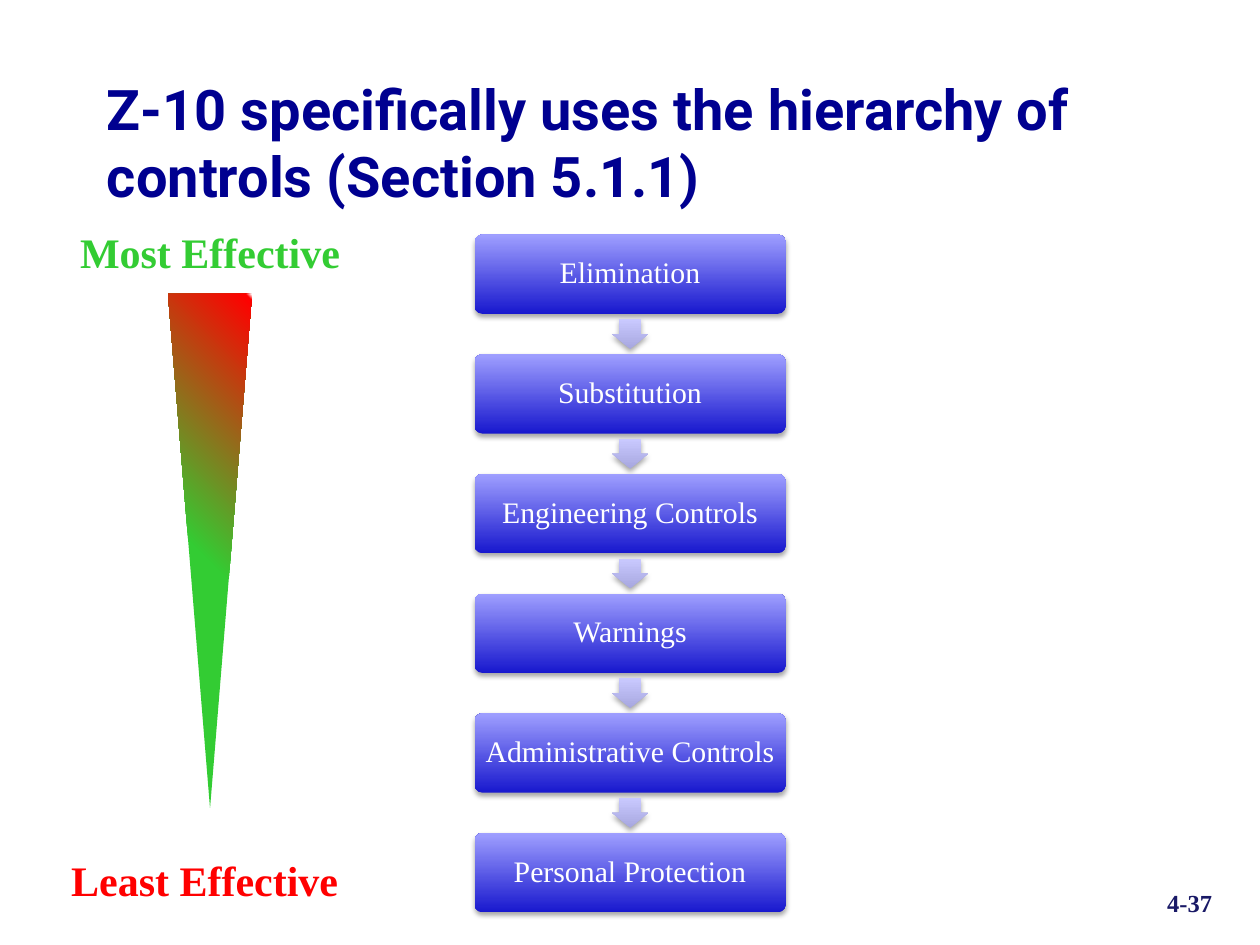
from lxml import etree
from pptx import Presentation
from pptx.dml.color import RGBColor
from pptx.enum import shapes, text
from pptx.oxml import ns
from pptx.util import Pt

COLORS = {
    "title": "000090", "most": "33CC33", "least": "FF0000", "white": "FFFFFF",
    "number": "191966", "box_dark": "1818CE", "box_light": "9F9FFF",
    "arrow_dark": "A7A7DF", "arrow_light": "C9C9FF", "shadow": "000000",
}
SERIF = "Times New Roman"
CONTROLS = ["Elimination", "Substitution", "Engineering Controls", "Warnings",
            "Administrative Controls", "Personal Protection"]


def add_element(parent, tag, **attributes):
    return etree.SubElement(parent, ns.qn(tag), attributes)


def add_color(parent, color):
    return add_element(parent, "a:srgbClr", val=COLORS[color])


def set_gradient(shape, stops, angle):
    shape.fill.gradient()
    gradient = shape.element.spPr.find(ns.qn("a:gradFill"))
    for child in list(gradient):
        gradient.remove(child)
    gradient.set("rotWithShape", "1")
    stop_list = add_element(gradient, "a:gsLst")
    for position, color in stops:
        add_color(add_element(stop_list, "a:gs", pos=str(position * 1000)), color)
    add_element(gradient, "a:lin", ang=str(angle * 60000), scaled="0")


def set_shadow(shape):
    effects = shape.element.spPr.find(ns.qn("a:effectLst"))
    shadow = add_element(effects, "a:outerShdw", blurRad=str(Pt(3.1)),
                         dist=str(Pt(1.8)), dir="5400000", rotWithShape="0")
    add_element(add_color(shadow, "shadow"), "a:alpha", val="35000")


def add_gradient_shape(slide, kind, box, stops, angle, rotation=0):
    shape = slide.shapes.add_shape(kind, *map(Pt, box))
    shape.rotation = rotation
    shape.line.fill.background()
    shape.shadow.inherit = False
    set_gradient(shape, stops, angle)
    return shape


def write_text(shape, words, size, color, align, font=SERIF, bold=False):
    frame = shape.text_frame
    frame.word_wrap = True
    paragraph = frame.paragraphs[0]
    paragraph.text = words
    paragraph.alignment = align
    paragraph.font.name = font
    paragraph.font.size = Pt(size)
    paragraph.font.bold = bold
    paragraph.font.color.rgb = RGBColor.from_string(COLORS[color])
    return frame


def add_label(slide, box, words, size, color, align, font=SERIF):
    label = slide.shapes.add_textbox(*map(Pt, box))
    return write_text(label, words, size, color, align, font, True)


def add_title(slide, box):
    frame = add_label(slide, box, "Z-10 specifically uses the hierarchy of controls (Section 5.1.1)",
                      32, "title", text.PP_ALIGN.LEFT, "Roboto")
    frame.vertical_anchor = text.MSO_ANCHOR.MIDDLE


def add_control(slide, box, words):
    shape = add_gradient_shape(slide, shapes.MSO_SHAPE.ROUNDED_RECTANGLE, box,
                               [(0, "box_dark"), (100, "box_light")], 270)
    shape.adjustments[0] = 0.1
    set_shadow(shape)
    frame = write_text(shape, words, 17, "white", text.PP_ALIGN.CENTER)
    frame.vertical_anchor = text.MSO_ANCHOR.MIDDLE
    frame.margin_left = frame.margin_right = Pt(5)
    frame.margin_top = frame.margin_bottom = Pt(5)
    frame.paragraphs[0].line_spacing = 0.9


def add_down_arrow(slide, center_x, center_y):
    length, breadth = 17.1, 20.5
    box = (center_x - length / 2, center_y - breadth / 2, length, breadth)
    arrow = add_gradient_shape(slide, shapes.MSO_SHAPE.RIGHT_ARROW, box,
                               [(0, "arrow_dark"), (100, "arrow_light")], 180, 90)
    arrow.adjustments[0] = 0.6
    arrow.adjustments[1] = 0.5
    set_shadow(arrow)


def add_hierarchy(slide, box):
    left, top, width, height = box
    control_height = 45.4
    pitch = (height - control_height) / (len(CONTROLS) - 1)
    for index, words in enumerate(CONTROLS):
        y = top + index * pitch
        if index:
            add_down_arrow(slide, left + width / 2, y - (pitch - control_height) / 2)
        add_control(slide, (left, y, width, control_height), words)


def add_effectiveness_scale(slide, box):
    left, top, width, height = box
    label_height = 36.7
    add_gradient_shape(slide, shapes.MSO_SHAPE.ISOSCELES_TRIANGLE,
                       (left + 78, top + 42, 48, 294),
                       [(48, "most"), (99, "least"), (100, "white")], 135, 180)
    add_label(slide, (left, top, width, label_height), "Most Effective", 24, "most",
              text.PP_ALIGN.CENTER)
    add_label(slide, (left, top + height - label_height, width - 6, label_height),
              "Least Effective", 24, "least", text.PP_ALIGN.CENTER)


def add_slide_number(slide, box):
    add_label(slide, box, "4-37", 14, "number", text.PP_ALIGN.RIGHT)


def main():
    presentation = Presentation()
    presentation.slide_width, presentation.slide_height = Pt(720), Pt(540)
    slide = presentation.slides.add_slide(presentation.slide_layouts[6])
    add_title(slide, (54, 36, 612, 90))
    add_hierarchy(slide, (271.2, 134, 177.8, 387.4))
    add_slide_number(slide, (649.4, 504, 50.4, 20.9))
    add_effectiveness_scale(slide, (18, 126, 204, 395.3))
    presentation.save("out.pptx")


if __name__ == "__main__":
    main()
